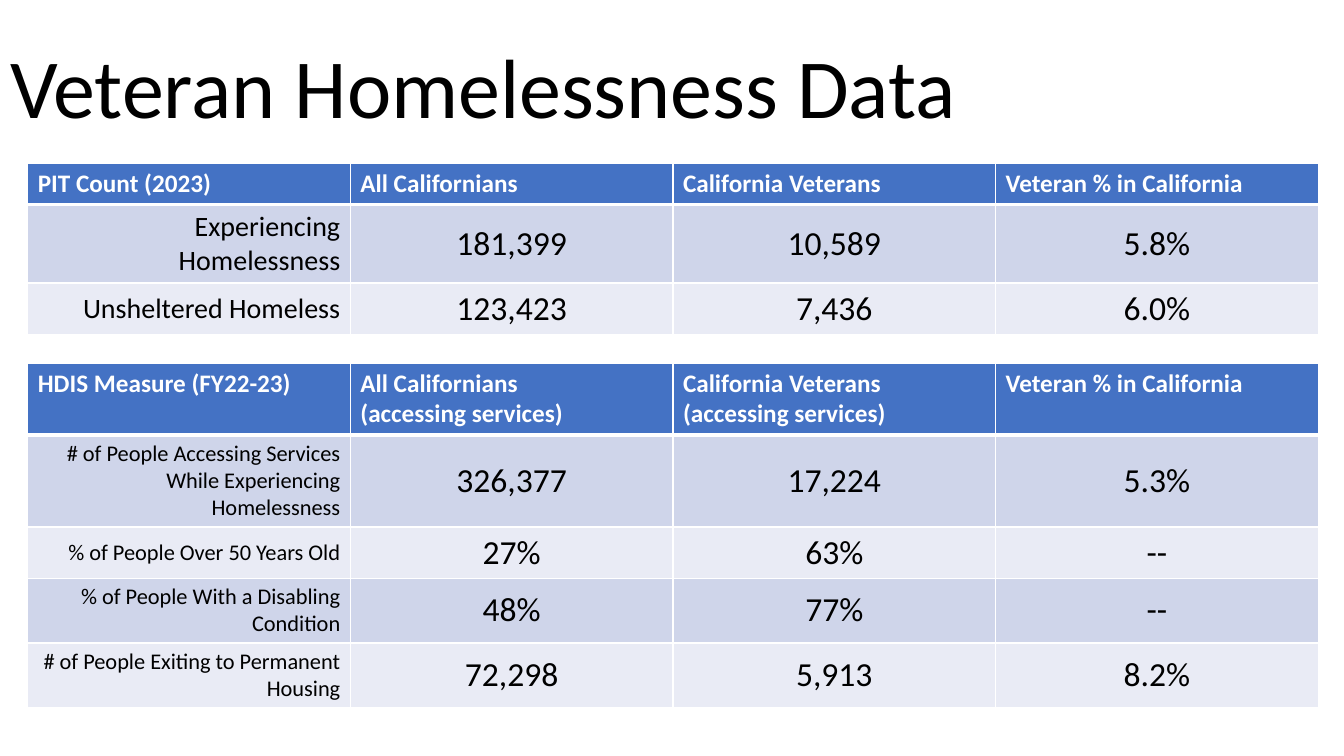
import pptx
import pptx.dml.color
import pptx.enum.text
import pptx.oxml
import pptx.oxml.ns
import pptx.util
from pptx.util import Cm

RGBColor = pptx.dml.color.RGBColor
ALIGN = pptx.enum.text.PP_ALIGN
ANCHOR = pptx.enum.text.MSO_ANCHOR

WHITE = RGBColor(0xFF, 0xFF, 0xFF)
BLACK = RGBColor(0x00, 0x00, 0x00)
HEADER_BLUE = RGBColor(0x44, 0x72, 0xC4)
BAND_DARK = RGBColor(0xCF, 0xD5, 0xEA)
BAND_LIGHT = RGBColor(0xE9, 0xEB, 0xF5)


class Deck:
    """Holds the style and the current slide."""

    font = "Calibri"
    col_width = Cm(8.13)
    row_height = Cm(1.03)

    def __init__(self):
        self.prs = pptx.Presentation()
        self.prs.slide_width = Cm(33.87)
        self.prs.slide_height = Cm(19.05)
        self.s = self.prs.slides.add_slide(self.prs.slide_layouts[5])

    def set_text(self, tf, text, align, size, color, bold=False):
        tf.text = text
        font_format = {"name": self.font, "size": pptx.util.Pt(size), "bold": bold}
        for p in tf.paragraphs:
            p.alignment = align
            for r in p.runs:
                for key, value in font_format.items():
                    setattr(r.font, key, value)
                r.font.color.rgb = color

    def title(self, text, left, top, width, height):
        sp = self.s.shapes.title
        place = {"left": left, "top": top, "width": width, "height": height}
        for key, value in place.items():
            setattr(sp, key, value)
        tf = sp.text_frame
        tf.word_wrap = True
        tf.auto_size = pptx.enum.text.MSO_AUTO_SIZE.NONE
        tf.vertical_anchor = ANCHOR.BOTTOM
        self.set_text(tf, text, ALIGN.LEFT, 60, BLACK)
        tf.paragraphs[0].line_spacing = 0.9

    def borders(self, cell, row):
        # Heavier rule between the header and the first data row
        widths = {"lnL": 1, "lnR": 1, "lnT": 3 if row == 1 else 1,
                  "lnB": 3 if row == 0 else 1}
        tc_pr = cell._tc.get_or_add_tcPr()
        for i, (tag, width) in enumerate(widths.items()):
            line = pptx.oxml.parse_xml(
                f'<a:{tag} {pptx.oxml.ns.nsdecls("a")} w="{pptx.util.Pt(width)}">'
                f'<a:solidFill><a:srgbClr val="{WHITE}"/></a:solidFill></a:{tag}>')
            tc_pr.insert(i, line)

    def table(self, rows, left, top, height, label_size):
        cols = len(rows[0])
        frame = self.s.shapes.add_table(
            len(rows), cols, left, top, self.col_width * cols, height)
        table = frame.table
        for col in table.columns:
            col.width = self.col_width
        for row in table.rows:
            row.height = self.row_height
        frame.height = height
        for i, values in enumerate(rows):
            for j, text in enumerate(values):
                cell = table.cell(i, j)
                cell.fill.solid()
                if i == 0:
                    fill = HEADER_BLUE
                    style = (ALIGN.LEFT, 18, WHITE, True)
                else:
                    fill = BAND_DARK if i % 2 else BAND_LIGHT
                    cell.vertical_anchor = ANCHOR.MIDDLE
                    style = ((ALIGN.RIGHT, label_size, BLACK) if j == 0
                             else (ALIGN.CENTER, 24, BLACK))
                cell.fill.fore_color.rgb = fill
                self.set_text(cell.text_frame, text, *style)
                self.borders(cell, i)


PIT_COUNT = [
    ("PIT Count (2023)", "All Californians", "California Veterans", "Veteran % in California"),
    ("Experiencing Homelessness", "181,399", "10,589", "5.8%"),
    ("Unsheltered Homeless", "123,423", "7,436", "6.0%"),
]
HDIS_MEASURES = [
    ("HDIS Measure (FY22-23)", "All Californians\n(accessing services)",
     "California Veterans (accessing services)", "Veteran % in California"),
    ("# of People Accessing Services While Experiencing Homelessness",
     "326,377", "17,224", "5.3%"),
    ("% of People Over 50 Years Old", "27%", "63%", "--"),
    ("% of People With a Disabling Condition", "48%", "77%", "--"),
    ("# of People Exiting to Permanent Housing", "72,298", "5,913", "8.2%"),
]


def main():
    deck = Deck()
    # Title
    deck.title("Veteran Homelessness Data", Cm(0), Cm(0.71), Cm(33.87), Cm(2.87))
    # Point-in-time count
    deck.table(PIT_COUNT, Cm(0.7), Cm(4.12), Cm(4.24), 20)
    # Service measures
    deck.table(HDIS_MEASURES, Cm(0.7), Cm(9.15), Cm(8.56), 16)
    deck.prs.save("out.pptx")


if __name__ == "__main__":
    main()
